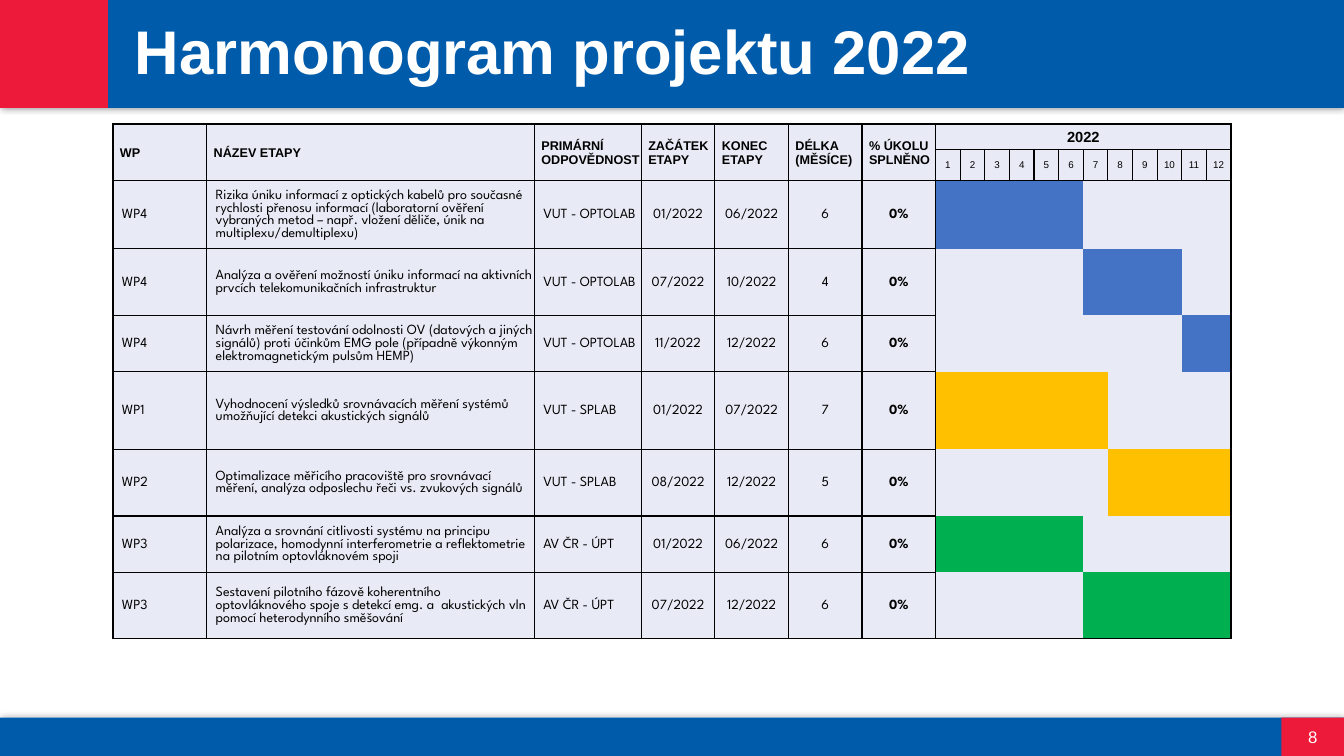
from dataclasses import dataclass

from lxml import etree
from pptx import Presentation
from pptx import util as u
from pptx.dml.color import RGBColor
from pptx.enum import shapes, text
from pptx.oxml.ns import qn


@dataclass(frozen=True)
class Theme:
    blue: str = "005BAA"
    red: str = "ED1A39"
    white: str = "FFFFFF"
    black: str = "000000"
    cell: str = "E8EBF5"
    optics: str = "4472C4"
    speech: str = "FFC000"
    sensing: str = "00B050"
    font: str = "Arial"
    body_font: str = "League Spartan"
    title: float = 44
    number: float = 12
    year: float = 10.5
    body: float = 10
    header: float = 9
    month: float = 7


THEME = Theme()
WIDTH, HEIGHT = 13.33, 7.5
LEFT, CENTER = text.PP_ALIGN.LEFT, text.PP_ALIGN.CENTER
MONTHS = 12
INFO_COLUMNS = [0.93, 3.25, 1.06, 0.73, 0.73, 0.73, 0.73]
ROWS = [0.25, 0.29, 0.66, 0.66, 0.56, 0.77, 0.66, 0.56, 0.66]
HEADERS = ["WP", "NÁZEV ETAPY", "PRIMÁRNÍ\nODPOVĚDNOST", "ZAČÁTEK\nETAPY",
           "KONEC\nETAPY", "DÉLKA\n(MĚSÍCE)", "% ÚKOLU\nSPLNĚNO"]
STAGES = [
    ("WP4", "Rizika úniku informací z optických kabelů pro současné rychlosti přenosu "
     "informací (laboratorní ověření vybraných metod – např. vložení děliče, únik na "
     "multiplexu/demultiplexu)", "VUT - OPTOLAB", "01/2022", "06/2022", "6", "0%"),
    ("WP4", "Analýza a ověření možností úniku informací na aktivních prvcích "
     "telekomunikačních infrastruktur", "VUT - OPTOLAB", "07/2022", "10/2022", "4", "0%"),
    ("WP4", "Návrh měření testování odolnosti OV (datových a jiných signálů) proti účinkům "
     "EMG pole (případně výkonným elektromagnetickým pulsům HEMP)",
     "VUT - OPTOLAB", "11/2022", "12/2022", "6", "0%"),
    ("WP1", "Vyhodnocení výsledků srovnávacích měření systémů umožňující detekci "
     "akustických signálů", "VUT - SPLAB", "01/2022", "07/2022", "7", "0%"),
    ("WP2", "Optimalizace měřicího pracoviště pro srovnávací měření, analýza odposlechu "
     "řeči vs. zvukových signálů", "VUT - SPLAB", "08/2022", "12/2022", "5", "0%"),
    ("WP3", "Analýza a srovnání citlivosti systému na principu polarizace, homodynní "
     "interferometrie a reflektometrie na pilotním optovláknovém spoji",
     "AV ČR - ÚPT", "01/2022", "06/2022", "6", "0%"),
    ("WP3", "Sestavení pilotního fázově koherentního optovláknového spoje s detekcí emg. "
     "a  akustických vln pomocí heterodynního směšování",
     "AV ČR - ÚPT", "07/2022", "12/2022", "6", "0%"),
]
BAR_COLORS = {"WP4": THEME.optics, "WP1": THEME.speech, "WP2": THEME.speech,
              "WP3": THEME.sensing}


def write(frame, words, size, color, align=LEFT, font=THEME.font, bold=False, spacing=None):
    """Fill a text frame, one paragraph for each line of words."""
    for index, line in enumerate(words.split("\n")):
        para = frame.paragraphs[0] if index == 0 else frame.add_paragraph()
        para.alignment, para.line_spacing = align, spacing
        span = para.add_run()
        span.text = line
        for name, value in {"size": u.Pt(size), "name": font, "bold": bold}.items():
            setattr(span.font, name, value)
        span.font.color.rgb = RGBColor.from_string(color)


def add_block(page, box, color, shadow=False):
    block = page.shapes.add_shape(shapes.MSO_SHAPE.RECTANGLE, *map(u.Inches, box))
    block.fill.solid()
    block.fill.fore_color.rgb = RGBColor.from_string(color)
    block.line.fill.background()
    block.shadow.inherit = False
    if shadow:
        effects = block.element.spPr.find(qn("a:effectLst"))
        outer = etree.SubElement(effects, qn("a:outerShdw"), blurRad=str(u.Pt(5)),
                                 dist="0", dir="0", rotWithShape="0")
        tint = etree.SubElement(outer, qn("a:srgbClr"), val=THEME.black)
        etree.SubElement(tint, qn("a:alpha"), val="40000")


def add_label(page, box, words, **style):
    frame = page.shapes.add_textbox(*map(u.Inches, box)).text_frame
    frame.word_wrap = True
    frame.vertical_anchor = text.MSO_ANCHOR.MIDDLE
    write(frame, words, color=THEME.white, **style)


def add_title_band(page, box, title):
    left, top, width, height = box
    add_block(page, box, THEME.blue, shadow=True)
    add_block(page, (left, top, height, height), THEME.red)
    add_label(page, (left + 1.24, top + 0.09, width - 1.5, height - 0.16), title,
              size=THEME.title, bold=True, spacing=0.9)


def add_footer(page, box, number):
    left, top, width, height = box
    corner = 0.62
    add_block(page, box, THEME.blue, shadow=True)
    add_block(page, (left + width - corner, top, corner, height), THEME.red)
    add_label(page, (left + width - corner + 0.06, top + 0.04, 0.5, 0.3), number,
              size=THEME.number, align=CENTER)


def dress(cell, fill=THEME.cell, sides="LRTB", inset=0.01):
    """Set a cell's insets, draw the named sides and colour it."""
    cell.vertical_anchor = text.MSO_ANCHOR.MIDDLE
    margins = {"left": inset, "right": 0.01, "top": 0.01, "bottom": 0}
    for side, value in margins.items():
        setattr(cell, f"margin_{side}", u.Inches(value))
    properties = cell._tc.get_or_add_tcPr()
    for side in "LRTB":
        line = etree.SubElement(properties, qn(f"a:ln{side}"), w=str(u.Pt(1)))
        if side in sides:
            paint = etree.SubElement(line, qn("a:solidFill"))
            etree.SubElement(paint, qn("a:srgbClr"), val=THEME.black)
        else:
            etree.SubElement(line, qn("a:noFill"))
    cell.fill.solid()
    cell.fill.fore_color.rgb = RGBColor.from_string(fill)


def fill_header(table):
    first = len(INFO_COLUMNS)
    for column, words in enumerate(HEADERS):
        for row in range(2):
            dress(table.cell(row, column), inset=0.07)
        write(table.cell(0, column).text_frame, words, THEME.header, THEME.black, bold=True)
        table.cell(0, column).merge(table.cell(1, column))
    for month in range(MONTHS):
        for row in range(2):
            dress(table.cell(row, first + month))
        write(table.cell(1, first + month).text_frame, str(month + 1), THEME.month,
              THEME.black, CENTER)
    write(table.cell(0, first).text_frame, "2022", THEME.year, THEME.black, CENTER, bold=True)
    table.cell(0, first).merge(table.cell(0, first + MONTHS - 1))


def fill_stage(table, row, stage):
    for column, words in enumerate(stage):
        cell = table.cell(row, column)
        centered = column > 2
        dress(cell, inset=0.01 if centered else 0.09)
        write(cell.text_frame, words, THEME.body, THEME.black, CENTER if centered else LEFT,
              THEME.body_font, bold=column == len(stage) - 1)
    start, end = (int(date[:2]) for date in stage[3:5])
    for month in range(1, MONTHS + 1):
        edges = {"L": month == 1, "R": month == MONTHS,
                 "T": row == 2, "B": row == len(ROWS) - 1}
        dress(table.cell(row, len(stage) + month - 1),
              BAR_COLORS[stage[0]] if start <= month <= end else THEME.cell,
              [side for side, drawn in edges.items() if drawn])


def add_schedule(page, left, top, width):
    month_width = (width - sum(INFO_COLUMNS)) / MONTHS
    columns = INFO_COLUMNS + [month_width] * MONTHS
    box = (left, top, width, sum(ROWS))
    table = page.shapes.add_table(len(ROWS), len(columns), *map(u.Inches, box)).table
    table.first_row = table.horz_banding = False
    for column, size in zip(table.columns, columns):
        column.width = u.Inches(size)
    for row, size in zip(table.rows, ROWS):
        row.height = u.Inches(size)
    fill_header(table)
    for row, stage in enumerate(STAGES, start=2):
        fill_stage(table, row, stage)


def main():
    deck = Presentation()
    deck.slide_width, deck.slide_height = u.Inches(WIDTH), u.Inches(HEIGHT)
    page = deck.slides.add_slide(deck.slide_layouts[6])
    add_title_band(page, (0, 0, WIDTH, 1.07), "Harmonogram projektu 2022")
    add_footer(page, (0, HEIGHT - 0.38, WIDTH, 0.38), "8")
    add_schedule(page, 1.12, 1.23, 11.09)
    deck.save("out.pptx")


if __name__ == "__main__":
    main()
